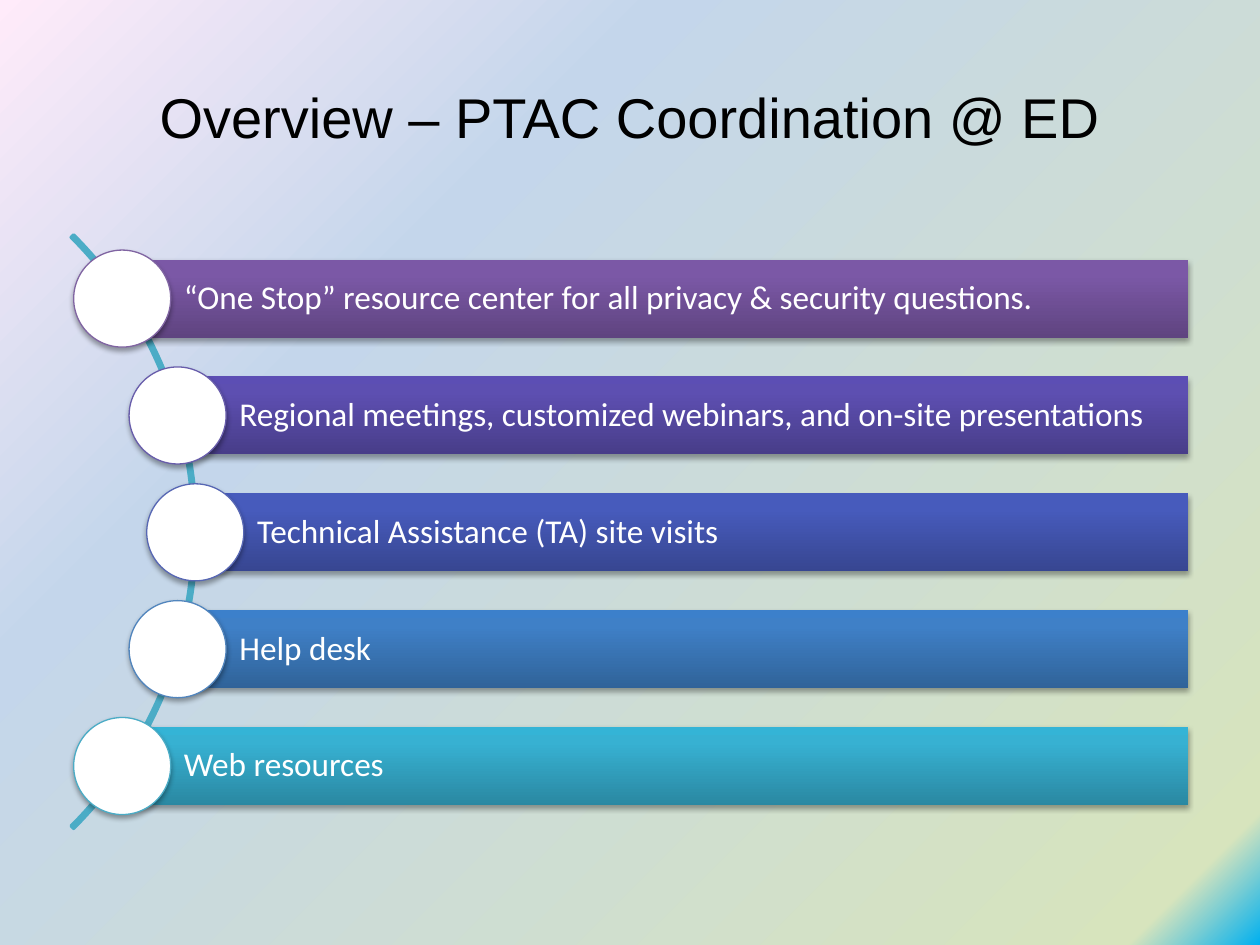
from lxml import etree
from pptx import Presentation
from pptx.dml.color import RGBColor
from pptx.enum.shapes import MSO_SHAPE
from pptx.enum.text import MSO_ANCHOR, PP_ALIGN
from pptx.oxml.ns import qn
from pptx.util import Inches, Pt

ARC = MSO_SHAPE.BLOCK_ARC
RECTANGLE = MSO_SHAPE.RECTANGLE
OVAL = MSO_SHAPE.OVAL
MIDDLE = MSO_ANCHOR.MIDDLE
LEFT = PP_ALIGN.LEFT
CENTER = PP_ALIGN.CENTER

THEME = {
    "title_font": "Arial",
    "title_size": 32,
    "title_color": "000000",
    "body_font": "Calibri",
    "body_size": 19,
    "body_color": "FFFFFF",
    "circle": "FFFFFF",
    "arc": "4BACC6",
    "shadow": "000000",
    "background": [(0, "00B0F0"), (6, "D7E4BD"), (70, "C4D6EB"), (100, "FFEBFA")],
}

ROWS = [
    ("“One Stop” resource center for all privacy & security questions.",
     0.97, ("5F4480", "7B58A6", "7C57A8"), "8064A2"),
    ("Regional meetings, customized webinars, and on-site presentations",
     1.41, ("483D89", "5D4FB1", "5C4EB4"), "685DAB"),
    ("Technical Assistance (TA) site visits",
     1.55, ("374691", "475BBC", "455ABF"), "5767B4"),
    ("Help desk",
     1.41, ("306399", "3F80C7", "3C80CB"), "5185BD"),
    ("Web resources",
     0.97, ("2A88A2", "37B1D2", "34B4D6"), "4BACC6"),
]


def write_text(shape, text, *, font, size, color, align=LEFT, spacing=1.0,
               insets=(0.1, 0.05, 0.1, 0.05)):
    frame = shape.text_frame
    frame.word_wrap = True
    frame.vertical_anchor = MIDDLE
    frame.margin_left, frame.margin_top, frame.margin_right, frame.margin_bottom = map(Inches, insets)
    frame.text = text
    paragraph = frame.paragraphs[0]
    paragraph.alignment = align
    paragraph.line_spacing = spacing
    run_font = paragraph.runs[0].font
    run_font.name = font
    run_font.size = Pt(size)
    run_font.color.rgb = RGBColor.from_string(color)


def set_gradient(fill, element, stops):
    fill.gradient()
    gradient = element.find(".//" + qn("a:gradFill"))
    stop_list = gradient.find(qn("a:gsLst"))
    for stop in list(stop_list):
        stop_list.remove(stop)
    for position, color in stops:
        stop = etree.SubElement(stop_list, qn("a:gs"), pos=str(position * 1000))
        etree.SubElement(stop, qn("a:srgbClr"), val=color)
    return gradient


presentation = Presentation()
presentation.slide_width = Inches(10)
presentation.slide_height = Inches(7.5)
slide = presentation.slides.add_slide(presentation.slide_layouts[5])

background = set_gradient(slide.background.fill, slide.element, THEME["background"])
background.remove(background.find(qn("a:lin")))
radial = etree.SubElement(background, qn("a:path"), {"path": "circle"})
etree.SubElement(radial, qn("a:fillToRect"), l="100000", t="100000")

title = slide.shapes.title
title.left, title.top, title.width, title.height = map(Inches, (0.5, 0.3, 9, 1.25))
write_text(title, "Overview – PTAC Coordination @ ED", font=THEME["title_font"],
           size=THEME["title_size"], color=THEME["title_color"], align=CENTER)

arc = slide.shapes.add_shape(ARC, Inches(-5.1), Inches(0.89), Inches(6.66), Inches(6.66))
for index, value in enumerate((189, 27, 0.004)):
    arc.adjustments[index] = value
arc.shadow.inherit = False
arc.fill.background()
arc.line.color.rgb = RGBColor.from_string(THEME["arc"])
arc.line.width = Pt(2)

FIRST_TOP, LAST_TOP = 2.06, 5.77
BAR_RIGHT, BAR_HEIGHT, CIRCLE_SIZE = 9.43, 0.62, 0.77
row_step = (LAST_TOP - FIRST_TOP) / (len(ROWS) - 1)

for index, (text, left, shades, outline) in enumerate(ROWS):
    top = FIRST_TOP + index * row_step

    bar = slide.shapes.add_shape(RECTANGLE, Inches(left), Inches(top),
                                 Inches(BAR_RIGHT - left), Inches(BAR_HEIGHT))
    gradient = set_gradient(bar.fill, bar.element, zip((0, 80, 100), shades))
    gradient.find(qn("a:lin")).set("ang", str(270 * 60000))
    bar.line.fill.background()
    write_text(bar, text, font=THEME["body_font"], size=THEME["body_size"],
               color=THEME["body_color"], spacing=0.9, insets=(0.49, 0.05, 0.05, 0.05))

    circle_top = top + (BAR_HEIGHT - CIRCLE_SIZE) / 2
    circle = slide.shapes.add_shape(OVAL, Inches(left - CIRCLE_SIZE / 2), Inches(circle_top),
                                    Inches(CIRCLE_SIZE), Inches(CIRCLE_SIZE))
    circle.fill.solid()
    circle.fill.fore_color.rgb = RGBColor.from_string(THEME["circle"])
    circle.line.color.rgb = RGBColor.from_string(outline)
    circle.line.width = Pt(0.75)

    for shape in (bar, circle):
        shape.shadow.inherit = False
        effects = shape.element.spPr.find(qn("a:effectLst"))
        shadow = etree.SubElement(effects, qn("a:outerShdw"), blurRad=str(Pt(3.1)),
                                  dist=str(Pt(1.8)), dir=str(90 * 60000), rotWithShape="0")
        shadow_color = etree.SubElement(shadow, qn("a:srgbClr"), val=THEME["shadow"])
        etree.SubElement(shadow_color, qn("a:alpha"), val="35000")

presentation.save("out.pptx")
